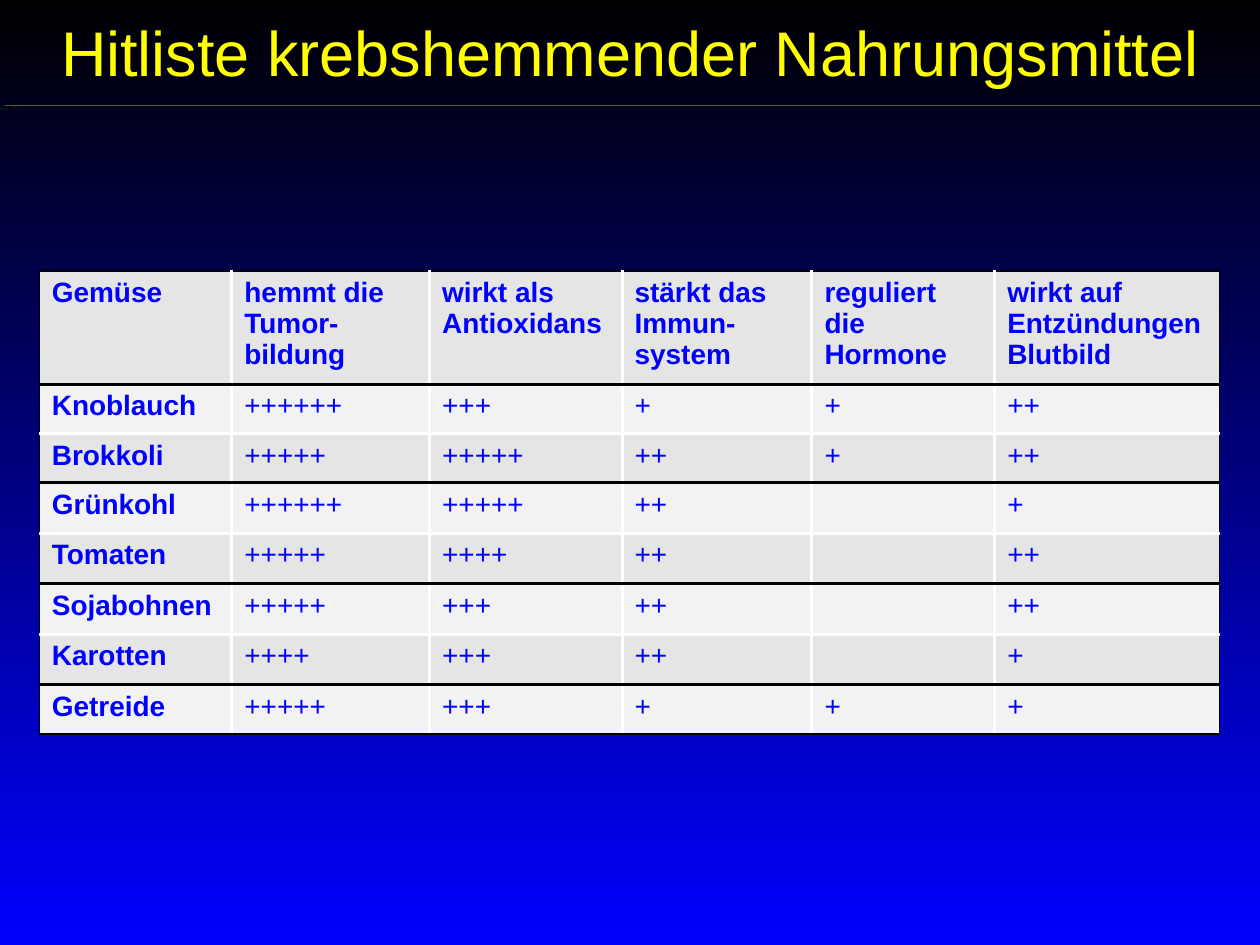
from lxml.etree import SubElement
from pptx import Presentation
from pptx.dml.color import RGBColor
from pptx.enum.shapes import MSO_CONNECTOR
from pptx.enum.text import MSO_ANCHOR, PP_ALIGN
from pptx.oxml.ns import qn
from pptx.util import Pt

BLACK = RGBColor(0x00, 0x00, 0x00)
WHITE = RGBColor(0xFF, 0xFF, 0xFF)
BLUE = RGBColor(0x00, 0x00, 0xFF)
YELLOW = RGBColor(0xFF, 0xFF, 0x00)
RED = RGBColor(0xFF, 0x00, 0x33)
GREY = RGBColor(0xE5, 0xE5, 0xE5)
LIGHT_GREY = RGBColor(0xF2, 0xF2, 0xF2)

FONT = "Arial"
COLUMN_WIDTHS = [110, 113, 110, 108.5, 104.5, 128.5]
HEADER_HEIGHT = 60.5
ROW_HEIGHT = 28.2

HEADERS = [
    ["Gemüse"],
    ["hemmt die", "Tumor-", "bildung"],
    ["wirkt als", "Antioxidans"],
    ["stärkt das", "Immun-", "system"],
    ["reguliert", "die", "Hormone"],
    ["wirkt auf", "Entzündungen", "Blutbild"],
]
# Number of plus signs per effect
RATINGS = {
    "Knoblauch": [6, 3, 1, 1, 2],
    "Brokkoli": [5, 5, 2, 1, 2],
    "Grünkohl": [6, 5, 2, 0, 1],
    "Tomaten": [5, 4, 2, 0, 2],
    "Sojabohnen": [5, 3, 2, 0, 2],
    "Karotten": [4, 3, 2, 0, 1],
    "Getreide": [5, 3, 1, 1, 1],
}


def add_run(paragraph, text, size, color, bold=False):
    run = paragraph.add_run()
    run.text = text
    run.font.name = FONT
    run.font.size = Pt(size)
    run.font.bold = bold
    run.font.color.rgb = color


def set_background(slide):
    fill = slide.background.fill
    fill.gradient()
    fill.gradient_angle = 270
    for stop, color in zip(fill.gradient_stops, (BLACK, BLUE)):
        stop.color.rgb = color


def add_title(slide, text):
    shape = slide.shapes.add_textbox(Pt(0), Pt(3.6), Pt(720), Pt(51))
    frame = shape.text_frame
    frame.word_wrap = True
    frame.vertical_anchor = MSO_ANCHOR.MIDDLE
    paragraph = frame.paragraphs[0]
    paragraph.alignment = PP_ALIGN.CENTER
    add_run(paragraph, text, 36, YELLOW)


def add_rule(slide):
    rule = slide.shapes.add_connector(
        MSO_CONNECTOR.STRAIGHT, Pt(3), Pt(60.25), Pt(723), Pt(60.25))
    rule.line.color.rgb = RED
    rule.line.width = Pt(0.75)
    SubElement(rule._element.spPr, qn("a:effectLst"))


def set_borders(cell, borders):
    """Put the border lines, given as side: (colour, width), before the fill."""
    properties = cell._tc.get_or_add_tcPr()
    for position, side in enumerate("LRTB"):
        color, width = borders[side]
        line = SubElement(properties, qn(f"a:ln{side}"), w=str(Pt(width)))
        fill = SubElement(line, qn("a:solidFill"))
        SubElement(fill, qn("a:srgbClr"), val=str(color))
        properties.insert(position, line)


def cell_borders(row, column, last_row, last_column):
    """Thin black frame, white inner grid, black line under every second row."""
    frame, grid, divider = (BLACK, 1), (WHITE, 2), (BLACK, 2)

    def row_edge(edge):
        if edge in (0, last_row + 1):
            return frame
        return divider if edge % 2 else grid

    return {
        "L": frame if column == 0 else grid,
        "R": frame if column == last_column else grid,
        "T": row_edge(row),
        "B": row_edge(row + 1),
    }


def fill_cell(cell, lines, bold, background):
    cell.fill.solid()
    cell.fill.fore_color.rgb = background
    frame = cell.text_frame
    for index, line in enumerate(lines):
        paragraph = frame.add_paragraph() if index else frame.paragraphs[0]
        if line:
            add_run(paragraph, line, 16, BLUE, bold)


def add_ratings_table(slide):
    rows = [HEADERS]
    for food, ratings in RATINGS.items():
        rows.append([[food]] + [["+" * rating] for rating in ratings])
    last_row, last_column = len(rows) - 1, len(HEADERS) - 1
    height = HEADER_HEIGHT + last_row * ROW_HEIGHT
    table = slide.shapes.add_table(
        len(rows), len(HEADERS), Pt(22.5), Pt(154.8),
        Pt(sum(COLUMN_WIDTHS)), Pt(height)).table
    for column, width in zip(table.columns, COLUMN_WIDTHS):
        column.width = Pt(width)
    for row_index, row in enumerate(rows):
        table.rows[row_index].height = Pt(ROW_HEIGHT if row_index else HEADER_HEIGHT)
        background = LIGHT_GREY if row_index % 2 else GREY
        for column_index, lines in enumerate(row):
            cell = table.cell(row_index, column_index)
            bold = row_index == 0 or column_index == 0
            fill_cell(cell, lines, bold, background)
            set_borders(cell, cell_borders(
                row_index, column_index, last_row, last_column))


def main():
    presentation = Presentation()
    presentation.slide_width = Pt(720)
    presentation.slide_height = Pt(540)
    slide = presentation.slides.add_slide(presentation.slide_layouts[6])
    set_background(slide)
    add_title(slide, "Hitliste krebshemmender Nahrungsmittel")
    add_rule(slide)
    add_ratings_table(slide)
    presentation.save("out.pptx")


if __name__ == "__main__":
    main()
